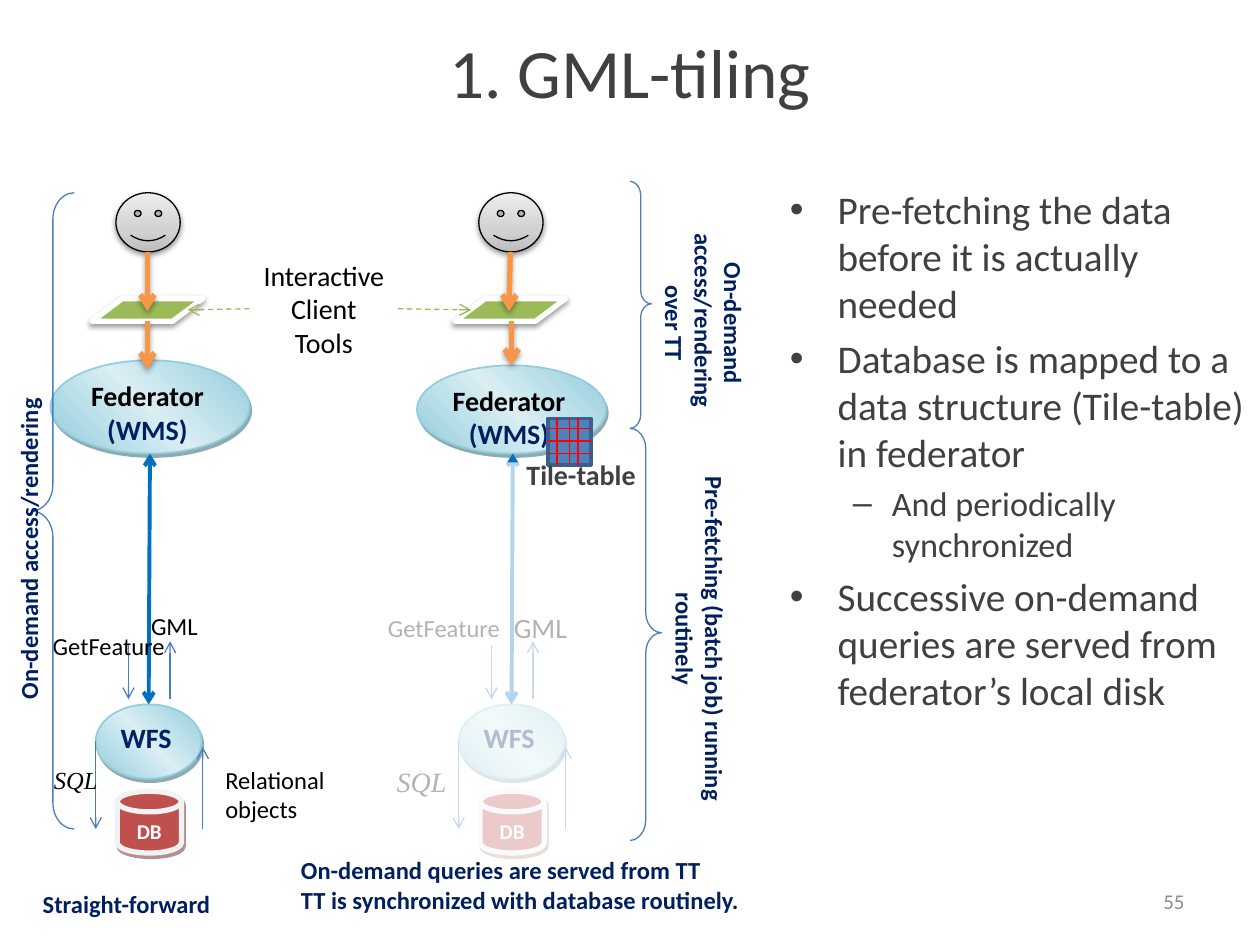
from lxml import etree
from pptx import Presentation
from pptx import util as u
from pptx.dml.color import RGBColor
from pptx.enum import dml, shapes, text
from pptx.oxml.ns import qn

COLORS = {
    "ink": "404040", "black": "000000", "white": "FFFFFF", "navy": "002060",
    "number": "8C8C8C", "thin": "4B7EBC", "flow": "0070C0", "user": "F79646",
    "dash": "98B955", "tool": "9BBB59", "rim": "92CDDC", "shine": "DAEEF3",
    "teal": "205867", "disk": "C0504D", "disk_rim": "F2F2F2", "maroon": "622423",
    "tile": "4F81BD", "tile_rim": "3A5F8C", "grid": "FF0000",
    "gray": "BDBDBD", "silver": "D1D1D1", "pale": "EEEEEE",
}
GLASS = ([(0, "rim"), (50, "shine"), (100, "rim")], 315)
FACE = ([(0, "gray"), (35, "silver"), (100, "pale")], 270)
SOFT = ("black", 38, 3.1, 1.6, 90)
ARROW = ("black", 35, 3.1, 1.8, 90)
TEAL = ("teal", 50, 0, 2.2, 63)
MAROON = ("maroon", 50, 0, 2.2, 63)
ALIGN = {"left": text.PP_ALIGN.LEFT, "center": text.PP_ALIGN.CENTER, "right": text.PP_ALIGN.RIGHT}
KIND = shapes.MSO_SHAPE


def rgb(name):
    return RGBColor.from_string(COLORS[name])


def add(parent, tag, **attributes):
    child = etree.SubElement(parent, qn(tag))
    for key, value in attributes.items():
        child.set(key, str(value))
    return child


def cast_shadow(effects, color, alpha, blur, distance, angle):
    shadow = add(effects, "a:outerShdw", blurRad=int(u.Pt(blur)), dist=int(u.Pt(distance)),
                 dir=angle * 60000, algn="ctr", rotWithShape=0)
    add(add(shadow, "a:srgbClr", val=COLORS[color]), "a:alpha", val=alpha * 1000)


def write(frame, words, size=14, colors=("navy",), bold=False, italic=False,
          font="Calibri", align="left", anchor=text.MSO_ANCHOR.TOP, insets=(0.1, 0.05, 0.1, 0.05)):
    """Fill a frame with one paragraph per line; the last colour carries on."""
    frame.word_wrap = True
    frame.vertical_anchor = anchor
    frame.margin_left, frame.margin_top, frame.margin_right, frame.margin_bottom = map(u.Inches, insets)
    for index, line in enumerate(words.split("\n")):
        para = frame.paragraphs[0] if index == 0 else frame.add_paragraph()
        para.alignment = ALIGN[align]
        span = para.add_run()
        span.text = line
        span.font.size, span.font.name = u.Pt(size), font
        span.font.bold, span.font.italic = bold, italic
        span.font.color.rgb = rgb(colors[min(index, len(colors) - 1)])


class Painter:
    """Holds the style and the current slide."""

    def __init__(self, page):
        self.page = page

    def label(self, at, words, vert=None, **style):
        box = self.page.shapes.add_textbox(*map(u.Inches, at))
        write(box.text_frame, words, **style)
        if vert:
            box.text_frame._txBody.bodyPr.set("vert", vert)
        return box

    def shape(self, kind, at, fill=None, line=None, width=1, shadow=None, adjust=(), alpha=None):
        shape = self.page.shapes.add_shape(kind, *map(u.Inches, at))
        for index, value in enumerate(adjust):
            shape.adjustments[index] = value
        properties = shape._element.spPr
        if fill is None:
            shape.fill.background()
        elif isinstance(fill, tuple):
            stops, angle = fill
            shape.fill.gradient()
            gradient = properties.find(qn("a:gradFill"))
            stop_list = gradient.find(qn("a:gsLst"))
            stop_list.clear()
            for place, color in stops:
                add(add(stop_list, "a:gs", pos=place * 1000), "a:srgbClr", val=COLORS[color])
            gradient.find(qn("a:lin")).set("ang", str(angle * 60000))
        else:
            shape.fill.solid()
            shape.fill.fore_color.rgb = rgb(fill)
            if alpha:
                add(properties.find(qn("a:solidFill"))[0], "a:alpha", val=alpha * 1000)
        if line:
            shape.line.color.rgb, shape.line.width = rgb(line), u.Pt(width)
        else:
            shape.line.fill.background()
        shape.shadow.inherit = False
        if shadow:
            cast_shadow(properties.find(qn("a:effectLst")), *shadow)
        return shape

    def line(self, start, end, color="thin", width=0.75, head=False, tail=True, dashed=False, shadow=None):
        line = self.page.shapes.add_connector(
            shapes.MSO_CONNECTOR.STRAIGHT, *map(u.Inches, (*start, *end)))
        line.line.color.rgb, line.line.width = rgb(color), u.Pt(width)
        if dashed:
            line.line.dash_style = dml.MSO_LINE.DASH
        properties = line._element.spPr
        outline = properties.find(qn("a:ln"))
        if head:
            add(outline, "a:headEnd", type="arrow")
        if tail:
            add(outline, "a:tailEnd", type="arrow")
        effects = add(properties, "a:effectLst")
        if shadow:
            cast_shadow(effects, *shadow)
        return line

    def bullets(self, at, items):
        frame = self.label(at, "\n".join(words for _, words in items),
                           size=22.4, colors=("ink",)).text_frame
        for para, (level, _) in zip(frame.paragraphs, items):
            para.level = level
            para.runs[0].font.size = u.Pt((22.4, 19.6)[level])
            properties = para._p.get_or_add_pPr()
            properties.set("marL", str(u.Inches((0.38, 0.81)[level])))
            properties.set("indent", str(-u.Inches((0.38, 0.31)[level])))
            add(add(properties, "a:spcBef"), "a:spcPct", val=20000)
            add(properties, "a:buFont", typeface="Arial")
            add(properties, "a:buChar", char="•–"[level])


def draw_service(painter, shift, federator_at):
    """Draw one client, federator, feature server and database column."""
    federator = painter.shape(KIND.OVAL, federator_at, GLASS, "rim", shadow=TEAL)
    write(federator.text_frame, "Federator\n(WMS)", size=16, colors=("black", "navy"),
          bold=True, align="center", insets=(0.04, 0.04, 0.08, 0.04))
    server = painter.shape(KIND.OVAL, (0.76 + shift, 5.59, 0.84, 0.59), GLASS, "rim", shadow=TEAL)
    write(server.text_frame, "WFS", size=16, bold=True, align="center", insets=(0.04, 0.04, 0.08, 0.04))
    flow = painter.line((1.19 + shift, 3.6), (1.19 + shift, 5.59), "flow", 2.25, head=True)
    flow.end_connect(server, 0)
    database = painter.shape(KIND.FLOWCHART_MAGNETIC_DISK, (0.93 + shift, 6.28, 0.51, 0.49),
                             "disk", "disk_rim", 3, MAROON)
    write(database.text_frame, "DB", size=12, colors=("white",), bold=True, align="center", insets=(0.05,) * 4)
    for x, top, bottom in ((0.76, 5.88, 6.58), (1.02, 5.12, 5.55)):
        painter.line((x + shift, top), (x + shift, bottom))
    for x, bottom, top in ((1.61, 6.58, 5.93), (1.35, 5.55, 5.09)):
        painter.line((x + shift, bottom), (x + shift, top))
    painter.shape(KIND.SMILEY_FACE, (0.92 + shift, 1.53, 0.51, 0.47), FACE, "black", 0.75, SOFT)
    painter.shape(KIND.PARALLELOGRAM, (0.73 + shift, 2.37, 0.88, 0.18), "tool", "white", 3, SOFT, (1.336,))


def main():
    deck = Presentation()
    deck.slide_width, deck.slide_height = u.Inches(10), u.Inches(7.5)
    painter = Painter(deck.slides.add_slide(deck.slide_layouts[6]))
    middle = text.MSO_ANCHOR.MIDDLE
    painter.label((0.5, 0.3, 9, 0.53), "1. GML-tiling", size=39.6, colors=("ink",), align="center", anchor=middle)
    painter.label((7.17, 6.95, 2.33, 0.4), "55", size=12, colors=("number",), align="right", anchor=middle)

    draw_service(painter, 0, (0.4, 2.86, 1.58, 0.74))
    draw_service(painter, 2.88, (3.31, 2.9, 1.5, 0.7))
    for x, y, words, size in ((0.32, 4.96, "GetFeature", 14), (1.1, 4.8, "GML", 14),
                              (2.98, 4.82, "GetFeature", 14), (3.98, 4.8, "GML", 16)):
        painter.label((x, y, 1.18, 0.4), words, size=size, colors=("black",))
    for x, size in ((0.33, 14), (3.05, 16)):
        painter.label((x, 6.02, 0.67, 0.4), "SQL", size=size, colors=("black",),
                      italic=True, font="Times New Roman")
    painter.label((1.69, 6.02, 1.27, 0.67), "Relational objects", colors=("black",))
    painter.shape(KIND.ROUNDED_RECTANGLE, (2.96, 3.67, 2.04, 3.19), "white", alpha=70)

    for start, end in (((1.17, 2), (1.17, 2.47)), ((1.17, 2.55), (1.17, 2.93)),
                       ((4.05, 2), (4.04, 2.47)), ((4.06, 2.55), (4.06, 2.9))):
        painter.line(start, end, "user", 3, shadow=ARROW)
    painter.label((1.98, 2, 1.18, 0.91), "Interactive \nClient Tools", size=16, colors=("black",), align="center")
    for start, end in ((3.16, 3.74), (1.98, 1.49)):
        painter.line((start, 2.45), (end, 2.46), "dash", dashed=True)

    painter.shape(KIND.LEFT_BRACE, (0.25, 1.53, 0.34, 5.05), None, "thin", 0.75, adjust=(0.613, 0.5))
    for at in ((5, 3.4, 0.25, 3.27), (5, 1.44, 0.17, 1.96)):
        painter.shape(KIND.RIGHT_BRACE, at, None, "thin", 0.75, adjust=(0.644, 0.496))
    painter.label((0.06, 2.1, 0.44, 3.55), "On-demand access/rendering", vert="vert270", bold=True)
    painter.label((5.17, 3.59, 0.67, 2.96), "Pre-fetching (batch job) running routinely",
                  vert="vert", bold=True, align="center")
    painter.label((5.08, 1.34, 0.91, 2.45), "On-demand access/rendering \nover TT",
                  vert="vert", bold=True, align="center")

    left, top, width, height = 4.35, 3.32, 0.34, 0.37
    painter.shape(KIND.RECTANGLE, (left, top, width, height), "tile", "tile_rim", 2)
    for x in (4.42, 4.52, 4.59):
        painter.line((x, top), (x, top + height), "grid", 1, tail=False)
    for y in (3.4, 3.5, 3.6):
        painter.line((left, y), (left + width, y), "grid", 1, tail=False)
    painter.label((4.08, 3.58, 1.42, 0.44), "Tile-table", size=16, colors=("ink",), bold=True)

    painter.label((0.24, 7.01, 1.92, 0.4), "Straight-forward", bold=True)
    painter.label((2.29, 6.74, 3.88, 0.67),
                  "On-demand queries are served from TT\nTT is synchronized with database routinely.", bold=True)
    painter.bullets((6.17, 1.42, 3.83, 3.92), [
        (0, "Pre-fetching the data before it is actually needed"),
        (0, "Database is mapped to a data structure (Tile-table) in federator"),
        (1, "And periodically synchronized"),
        (0, "Successive on-demand queries are served from federator’s local disk")])
    deck.save("out.pptx")


if __name__ == "__main__":
    main()
